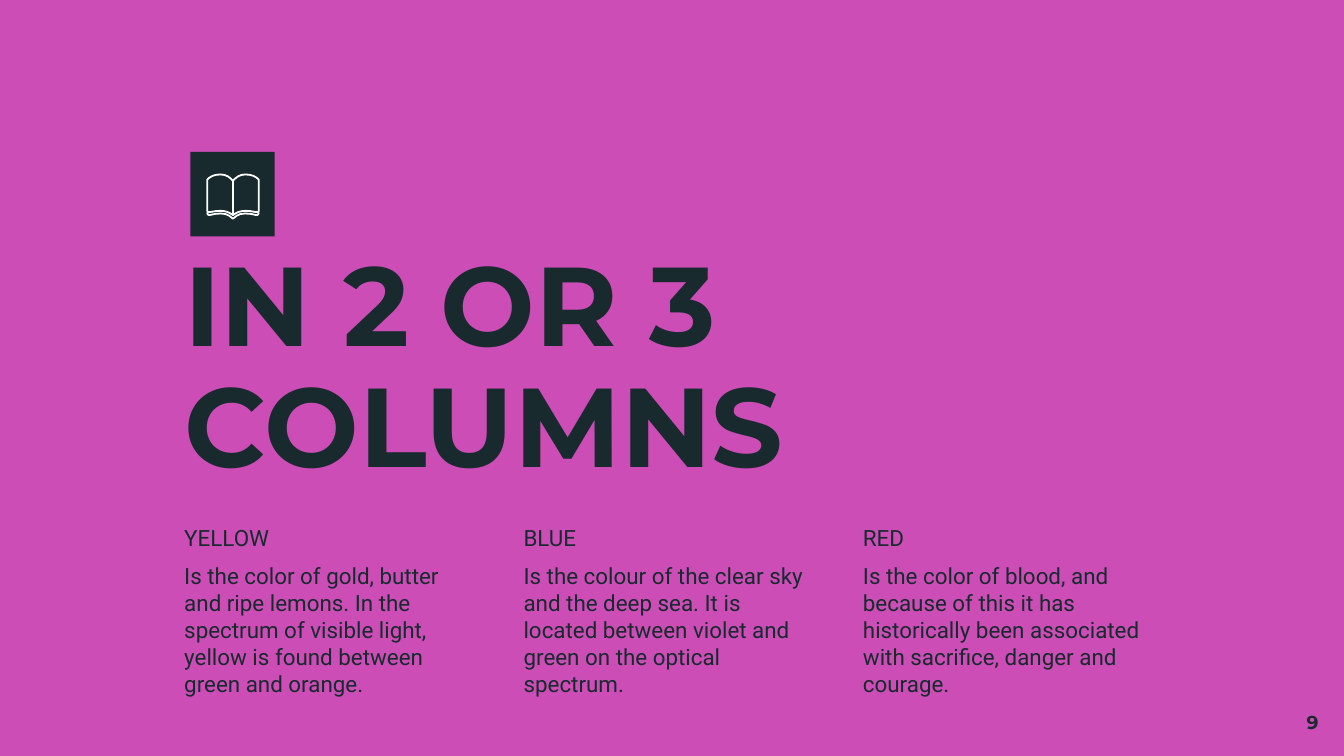
"""Build a title slide with three text columns and a book icon."""
from lxml.etree import SubElement
from pptx import Presentation
from pptx.dml.color import RGBColor
from pptx.enum.shapes import MSO_SHAPE
from pptx.enum.text import MSO_ANCHOR, MSO_AUTO_SIZE, PP_ALIGN
from pptx.oxml.ns import qn
from pptx.util import Pt

COLORS = {"background": "CC4DB6", "ink": "182A2E", "icon": "FFFFFF"}
COLUMNS = [
    ("YELLOW", "Is the color of gold, butter and ripe lemons. In the spectrum "
               "of visible light, yellow is found between green and orange."),
    ("BLUE", "Is the colour of the clear sky and the deep sea. It is located "
             "between violet and green on the optical spectrum."),
    ("RED", "Is the color of blood, and because of this it has historically "
            "been associated with sacrifice, danger and courage."),
]
SPINE = 124.8
COVER = [(13.8, 113.8), (13.6, 114.8), (13, 115.2), (12.3, 115.2),
         (9.5, 114.6), (6.6, 114.4), (4, 114.7), (2, 115.6), (0, 117.2)]
PAGE = [(0, 97.2), (0, 115.2), (1.5, 114.3), (3, 113.6), (5, 113.1),
        (6.6, 113), (9, 113.1), (12, 113.6), (13, 113.7), (13.6, 113.4),
        (13.8, 113), (13.8, 96.5), (13.6, 96), (12.6, 95.2), (11, 94.3),
        (9, 93.7), (6.6, 93.5), (4.5, 93.8), (2.8, 94.5), (1.2, 95.7),
        (0.2, 96.7)]


def color(name):
    return RGBColor.from_string(COLORS[name])


def place(sp, left, top, width, height):
    sp.left, sp.top = Pt(left), Pt(top)
    sp.width, sp.height = Pt(width), Pt(height)


def setup_frame(tf):
    tf.word_wrap = True
    tf.auto_size = MSO_AUTO_SIZE.NONE
    tf.vertical_anchor = MSO_ANCHOR.TOP
    tf.margin_left = tf.margin_right = Pt(7.2)
    tf.margin_top = tf.margin_bottom = Pt(7.2)


def add_run(p, text, font, size, bold=False, align=PP_ALIGN.LEFT):
    p.alignment = align
    r = p.add_run()
    r.text = text
    r.font.name, r.font.size, r.font.bold = font, Pt(size), bold
    r.font.color.rgb = color("ink")


def set_title(sp, text):
    place(sp, 91.5, 126.7, 536.5, 152)
    setup_frame(sp.text_frame)
    p = sp.text_frame.paragraphs[0]
    p.line_spacing = 0.9
    add_run(p, text, "Montserrat", 60, True)


def set_column(sp, left, texts):
    place(sp, left, 273.7, 173, 113.5)
    tf = sp.text_frame
    setup_frame(tf)
    for i, text in enumerate(texts):
        p = tf.add_paragraph() if i else tf.paragraphs[0]
        p.space_before = Pt(6)
        add_run(p, text, "Roboto", 12)
        pPr = p._p.get_or_add_pPr()
        pPr.set("marL", "0")
        pPr.set("indent", "0")
        SubElement(pPr, qn("a:buNone"))


def add_outline(shapes, points, side, close):
    pts = [(Pt(SPINE + side * dx), Pt(y)) for dx, y in points]
    builder = shapes.build_freeform(*pts[0])
    builder.add_line_segments(pts[1:], close=close)
    sp = builder.convert_to_shape()
    sp.shadow.inherit = False
    sp.fill.background()
    sp.line.color.rgb = color("icon")
    sp.line.width = Pt(0.96)


def add_icon(shapes):
    sp = shapes.add_shape(MSO_SHAPE.RECTANGLE, Pt(102), Pt(81.4), Pt(45.2), Pt(45.2))
    sp.shadow.inherit = False
    sp.fill.solid()
    sp.fill.fore_color.rgb = color("ink")
    sp.line.fill.background()
    book = shapes.add_group_shape()
    for points, close in ((COVER, False), (PAGE, True)):
        for side in (-1, 1):
            add_outline(book.shapes, points, side, close)


def add_page_number(shapes, text):
    sp = shapes.add_textbox(Pt(670.3), Pt(373.7), Pt(43.2), Pt(31))
    setup_frame(sp.text_frame)
    add_run(sp.text_frame.paragraphs[0], text, "Montserrat", 10, True, PP_ALIGN.RIGHT)


def main():
    prs = Presentation()
    prs.slide_width, prs.slide_height = Pt(720), Pt(405)
    s = prs.slides.add_slide(prs.slide_layouts.get_by_name("Comparison"))
    s.background.fill.solid()
    s.background.fill.fore_color.rgb = color("background")
    title, *bodies = s.placeholders
    set_title(title, "IN 2 OR 3 COLUMNS")
    for i, (sp, texts) in enumerate(zip(bodies, COLUMNS)):
        set_column(sp, 91.5 + i * 181.8, texts)
    for sp in bodies[len(COLUMNS):]:
        sp.element.getparent().remove(sp.element)
    add_icon(s.shapes)
    add_page_number(s.shapes, "9")
    prs.save("out.pptx")


if __name__ == "__main__":
    main()
